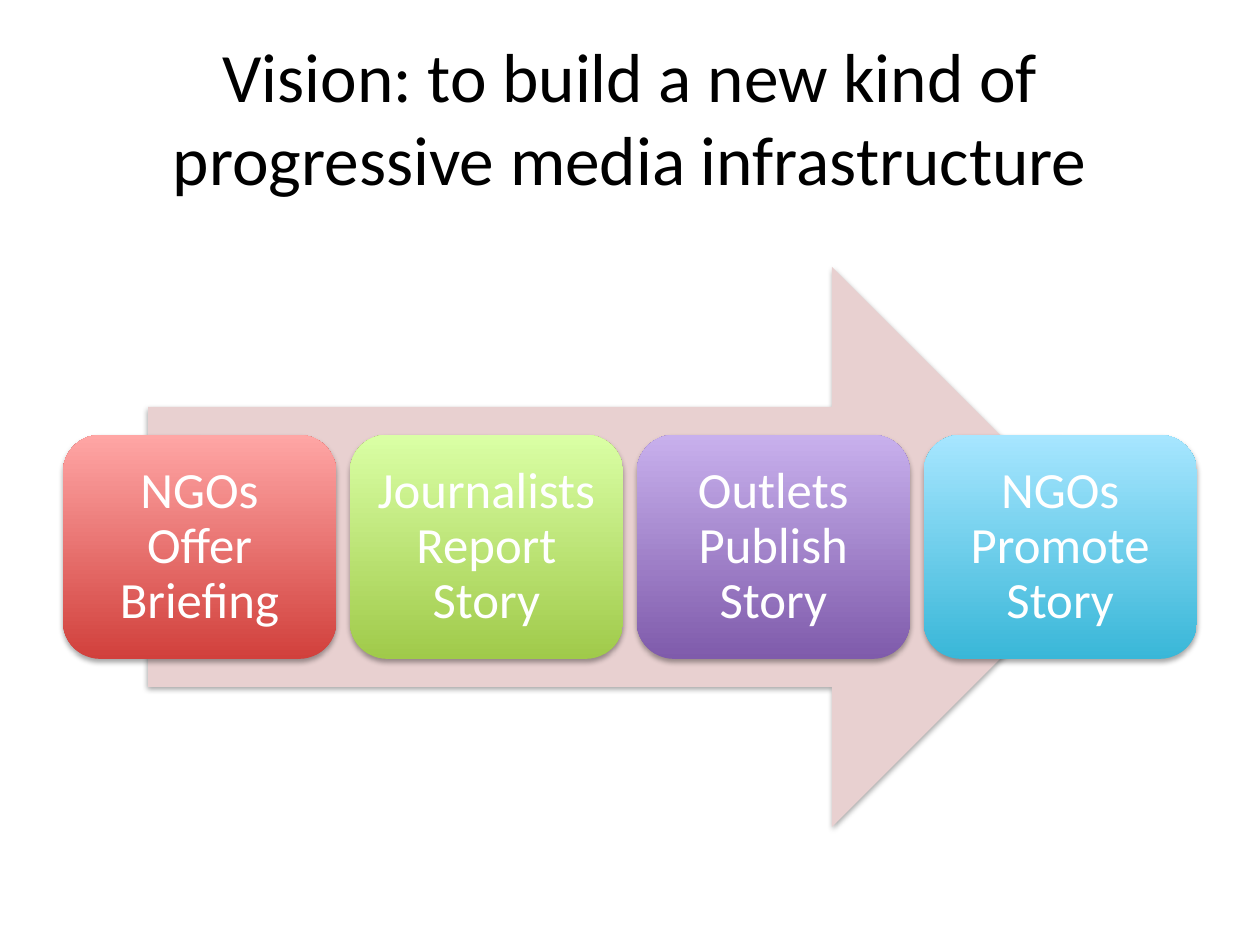
import pptx
import pptx.dml.color
import pptx.enum.shapes
import pptx.enum.text
import pptx.oxml
import pptx.oxml.ns
import pptx.util

Pt = pptx.util.Pt
RGB = pptx.dml.color.RGBColor.from_string
MSO = pptx.enum.shapes.MSO_SHAPE

THEME = {
    "font": "Calibri",
    "title_size": 39.6,
    "step_size": 29,
    "title": "000000",
    "step_text": "FFFFFF",
    "arrow": "E8D0D0",
    "shadow": "000000",
    "gradients": [
        ("D1403C", "FFA6A5"),
        ("A0CA4A", "DAFFA5"),
        ("7F5BAB", "C8B0ED"),
        ("39B7D8", "A7E6FF"),
    ],
}
STEPS = [
    "NGOs Offer Briefing",
    "Journalists Report Story",
    "Outlets Publish Story",
    "NGOs Promote Story",
]


def add_shadow(sp):
    sp.shadow.inherit = False
    effects = sp.element.spPr.find(pptx.oxml.ns.qn("a:effectLst"))
    effects.append(pptx.oxml.parse_xml(
        f'<a:outerShdw {pptx.oxml.ns.nsdecls("a")} blurRad="{Pt(3.1)}" '
        f'dist="{Pt(1.8)}" dir="5400000" rotWithShape="0">'
        f'<a:srgbClr val="{THEME["shadow"]}"><a:alpha val="35000"/></a:srgbClr>'
        '</a:outerShdw>'))


def write(sp, text, size, color):
    tf = sp.text_frame
    tf.word_wrap = True
    tf.vertical_anchor = pptx.enum.text.MSO_ANCHOR.MIDDLE
    p = tf.paragraphs[0]
    p.alignment = pptx.enum.text.PP_ALIGN.CENTER
    r = p.add_run()
    r.text = text
    r.font.name = THEME["font"]
    r.font.size = Pt(size)
    r.font.color.rgb = RGB(color)
    return tf


prs = pptx.Presentation()
prs.slide_width, prs.slide_height = Pt(720), Pt(540)
s = prs.slides.add_slide(prs.slide_layouts[6])

left, width, middle = 36, 648, 312.5

title = s.shapes.add_textbox(Pt(left), Pt(21.6), Pt(width), Pt(90))
write(title, "Vision: to build a new kind of progressive media infrastructure",
      THEME["title_size"], THEME["title"])

arrow_w, arrow_h = width * 0.85, 320
arrow = s.shapes.add_shape(
    MSO.RIGHT_ARROW, Pt(left + (width - arrow_w) / 2), Pt(middle - arrow_h / 2),
    Pt(arrow_w), Pt(arrow_h))
arrow.fill.solid()
arrow.fill.fore_color.rgb = RGB(THEME["arrow"])
arrow.line.fill.background()
add_shadow(arrow)

step_w, step_h = 156.2, 128
pitch = (width - step_w) / (len(STEPS) - 1)
for i, (text, colors) in enumerate(zip(STEPS, THEME["gradients"])):
    sp = s.shapes.add_shape(
        MSO.ROUNDED_RECTANGLE, Pt(left + i * pitch), Pt(middle - step_h / 2),
        Pt(step_w), Pt(step_h))
    sp.fill.gradient()
    sp.fill.gradient_angle = 90
    for stop, color in zip(sp.fill.gradient_stops, colors):
        stop.color.rgb = RGB(color)
    sp.line.fill.background()
    add_shadow(sp)
    tf = write(sp, text, THEME["step_size"], THEME["step_text"])
    tf.margin_left = tf.margin_right = tf.margin_top = tf.margin_bottom = Pt(8.6)
    tf.paragraphs[0].line_spacing = 0.9

prs.save("out.pptx")
